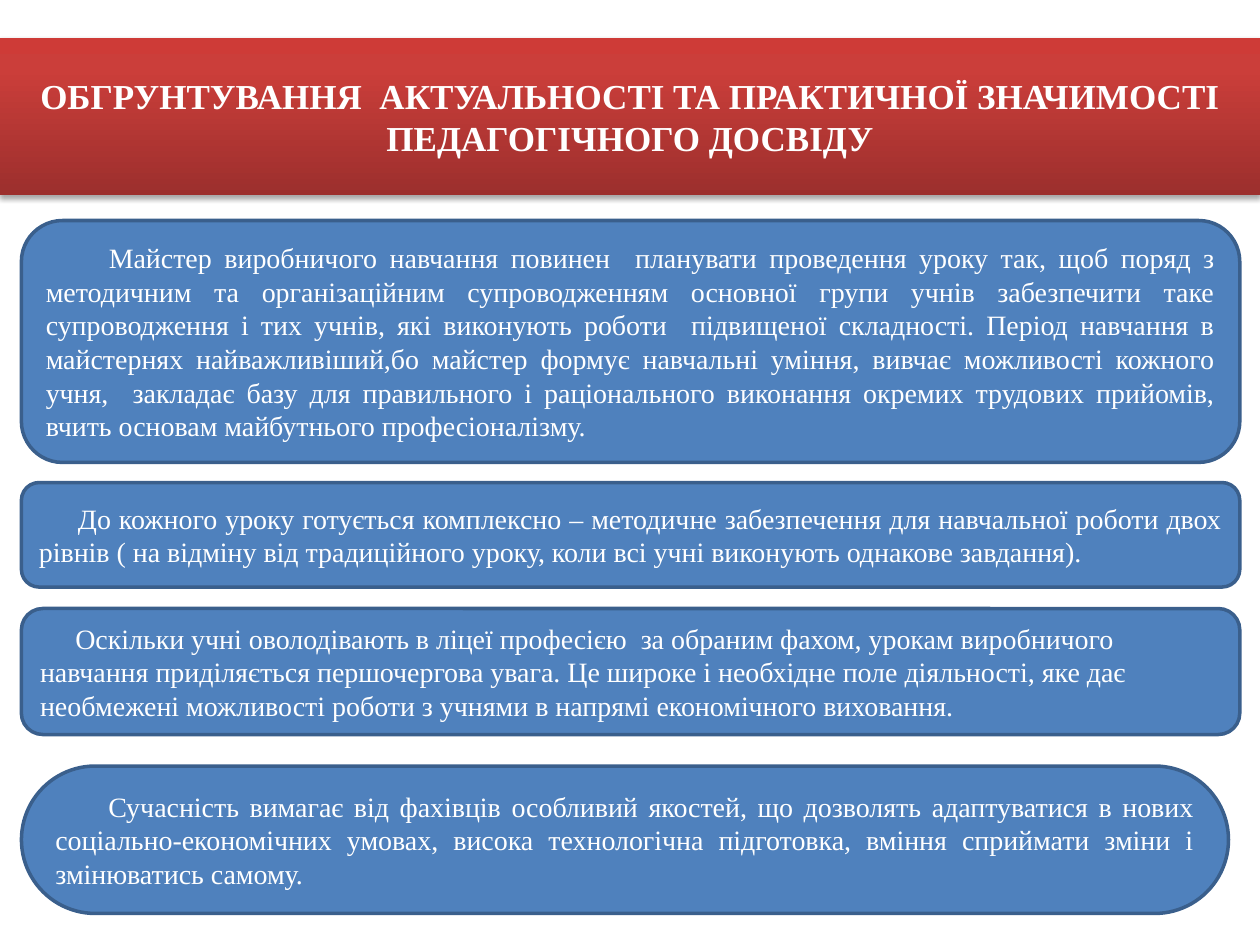
from pptx import Presentation
from pptx.dml.color import RGBColor
from pptx.enum.shapes import MSO_SHAPE
from pptx.enum.text import MSO_ANCHOR, MSO_AUTO_SIZE, PP_ALIGN
from pptx.oxml import parse_xml
from pptx.oxml.ns import nsdecls
from pptx.util import Inches, Pt

ROUNDED = MSO_SHAPE.ROUNDED_RECTANGLE
MIDDLE = MSO_ANCHOR.MIDDLE
NO_FIT = MSO_AUTO_SIZE.NONE
CENTER, JUSTIFY, LEFT = PP_ALIGN.CENTER, PP_ALIGN.JUSTIFY, PP_ALIGN.LEFT

COLORS = {
    "text": "FFFFFF",
    "panel": "4F81BD",
    "outline": "3A5F8C",
    "shadow": "000000",
}
TITLE_STOPS = [(0, "9C2F2D"), (80, "CB3E3A"), (100, "CE3B37")]
TITLE_FORMAT = {"name": "Times New Roman", "size": Pt(20), "bold": True}
BODY_FORMAT = {"name": "Times New Roman", "size": Pt(16), "bold": False}
PANEL_LEFT = 0.17

TITLE = "ОБГРУНТУВАННЯ  АКТУАЛЬНОСТІ ТА ПРАКТИЧНОЇ ЗНАЧИМОСТІ ПЕДАГОГІЧНОГО ДОСВІДУ"
PANELS = [
    (1.75, 9.67, 1.92, 0.17, JUSTIFY, 0.5,
     "Майстер виробничого навчання повинен  планувати проведення уроку так, "
     "щоб поряд з методичним та організаційним супроводженням основної групи "
     "учнів забезпечити таке супроводження і тих учнів, які виконують роботи  "
     "підвищеної складності. Період навчання в майстернях найважливіший,бо "
     "майстер формує навчальні уміння, вивчає можливості кожного учня,  "
     "закладає базу для правильного і раціонального виконання окремих трудових "
     "прийомів, вчить основам майбутнього професіоналізму."),
    (3.83, 9.67, 0.83, 0.17, JUSTIFY, 0.31,
     "До кожного уроку готується комплексно – методичне забезпечення для "
     "навчальної роботи двох рівнів ( на відміну від традиційного уроку, коли "
     "всі учні виконують однакове завдання)."),
    (4.83, 9.67, 1, 0.17, LEFT, 0.28,
     "Оскільки учні оволодівають в ліцеї професією  за обраним фахом, урокам "
     "виробничого навчання приділяється першочергова увага. Це широке і "
     "необхідне поле діяльності, яке дає необмежені можливості роботи з учнями "
     "в напрямі економічного виховання."),
    (6.08, 9.58, 1.17, 0.5, JUSTIFY, 0.42,
     "Сучасність вимагає від фахівців особливий якостей, що дозволять "
     "адаптуватися в нових соціально-економічних умовах, висока технологічна "
     "підготовка, вміння сприймати зміни і змінюватись самому."),
]


def write_text(shape, text, align, text_format):
    frame = shape.text_frame
    frame.word_wrap = True
    frame.auto_size = NO_FIT
    frame.vertical_anchor = MIDDLE
    para = frame.paragraphs[0]
    para.alignment = align
    span = para.add_run()
    span.text = text
    for name, value in text_format.items():
        setattr(span.font, name, value)
    span.font.color.rgb = RGBColor.from_string(COLORS["text"])
    return para


def paint_title(title):
    stops = "".join(
        f'<a:gs pos="{position * 1000}"><a:srgbClr val="{color}"/></a:gs>'
        for position, color in TITLE_STOPS
    )
    gradient = (
        f'<a:gradFill {nsdecls("a")} rotWithShape="1"><a:gsLst>{stops}</a:gsLst>'
        '<a:lin ang="16200000" scaled="0"/></a:gradFill>'
    )
    shadow = (
        f'<a:effectLst {nsdecls("a")}>'
        f'<a:outerShdw blurRad="{Pt(3.1)}" dist="{Pt(1.8)}" dir="5400000" rotWithShape="0">'
        f'<a:srgbClr val="{COLORS["shadow"]}"><a:alpha val="35000"/></a:srgbClr>'
        '</a:outerShdw></a:effectLst>'
    )
    for xml in (gradient, shadow):
        title.element.spPr.append(parse_xml(xml))


def add_title(page):
    title = page.shapes.title
    title.left, title.top = Inches(0), Inches(0.3)
    title.width, title.height = Inches(10), Inches(1.25)
    paint_title(title)
    write_text(title, TITLE, CENTER, TITLE_FORMAT)


def add_panel(page, top, width, height, rounding, align, indent, text):
    panel = page.shapes.add_shape(
        ROUNDED, Inches(PANEL_LEFT), Inches(top), Inches(width), Inches(height)
    )
    panel.adjustments[0] = rounding
    panel.shadow.inherit = False
    panel.fill.solid()
    panel.fill.fore_color.rgb = RGBColor.from_string(COLORS["panel"])
    panel.line.color.rgb = RGBColor.from_string(COLORS["outline"])
    panel.line.width = Pt(2)
    para = write_text(panel, text, align, BODY_FORMAT)
    para._p.get_or_add_pPr().set("indent", str(Inches(indent)))


def main():
    deck = Presentation()
    deck.slide_width, deck.slide_height = Inches(10), Inches(7.5)
    page = deck.slides.add_slide(deck.slide_layouts[5])
    add_title(page)
    for panel in PANELS:
        add_panel(page, *panel)
    deck.save("out.pptx")


if __name__ == "__main__":
    main()
